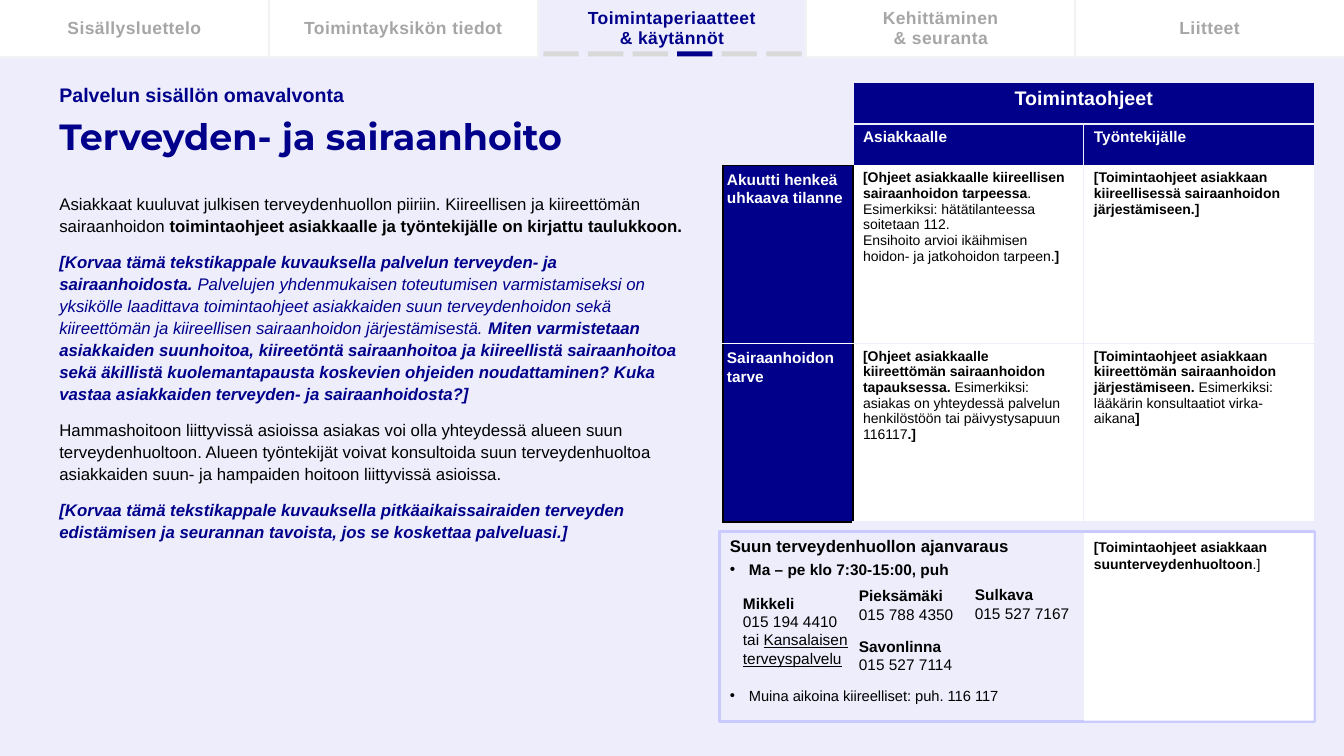
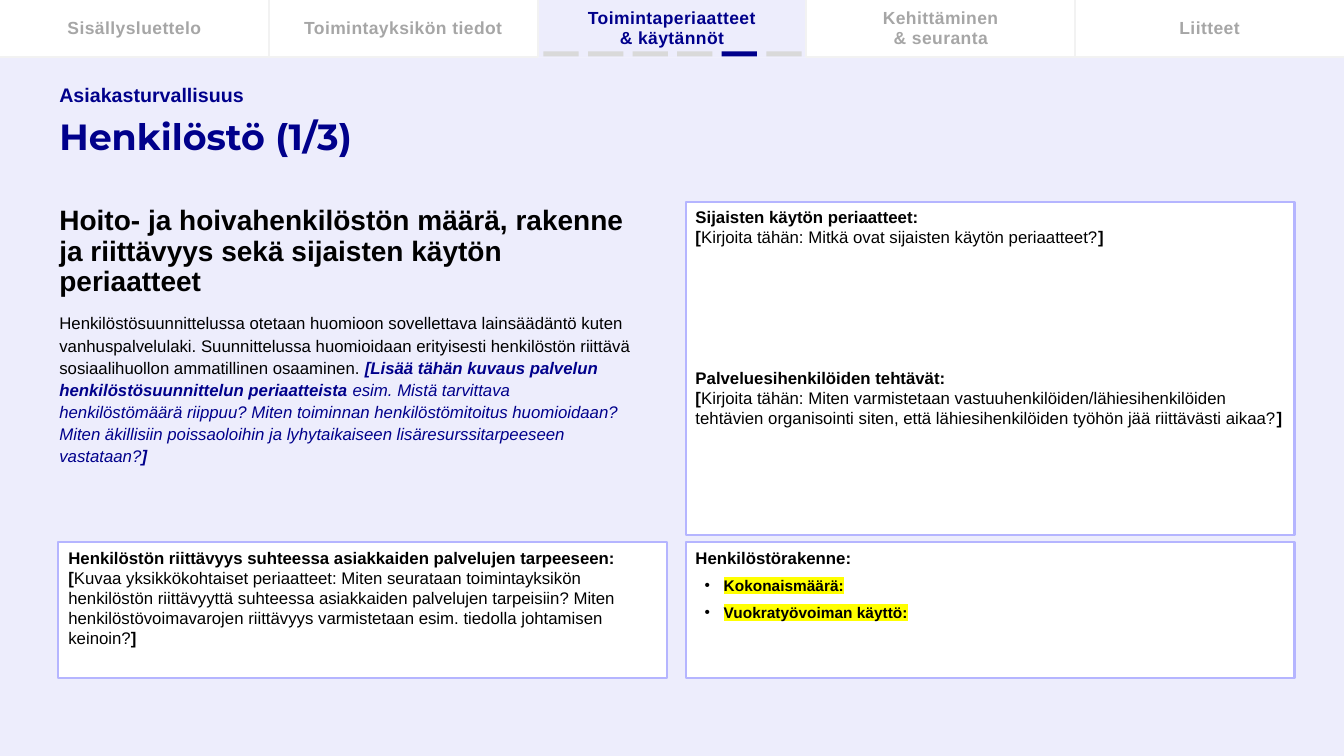
from pptx import Presentation
from pptx.dml.color import RGBColor
from pptx.enum.shapes import MSO_CONNECTOR, MSO_SHAPE
from pptx.enum.text import MSO_ANCHOR, PP_ALIGN
from pptx.oxml.ns import qn
from pptx.util import Inches, Pt
from lxml.etree import Element, SubElement

COLORS = {
    "navy": "00008B", "pale": "EDEDFC", "white": "FFFFFF", "black": "000000",
    "tab": "A6A6A6", "rule": "F2F2F2", "step": "D9D9D9",
    "frame": "B5B5FF", "contact": "C9CAFF", "yellow": "FFFF00",
}
RGB = {name: RGBColor.from_string(value) for name, value in COLORS.items()}
MARKS = {"b": "bold", "i": "italic", "u": "underline"}
BODY = {"line_spacing": 1.1, "space_before": Pt(7.9), "space_after": Pt(1.8)}
TAB_W = 13.33 / 5
TABS = ["Sisällysluettelo", "Toimintayksikön tiedot", "Toimintaperiaatteet\n& käytännöt",
        "Kehittäminen\n& seuranta", "Liitteet"]


def write(tf, paras, size=12, color="black", font="Arial", spc=0, **shared):
    for i, (runs, own) in enumerate(paras):
        p = tf.paragraphs[0] if i == 0 else tf.add_paragraph()
        fmt = {"size": size, "bullet": 0, **shared, **own}
        p_size, bullet = fmt.pop("size"), fmt.pop("bullet")
        if i == 0:
            fmt.pop("space_before", None)
        for name, value in fmt.items():
            setattr(p, name, value)
        if bullet:
            pPr = p._p.get_or_add_pPr()
            pPr.set("marL", str(Inches(bullet)))
            pPr.set("indent", str(Inches(-0.19)))
            SubElement(pPr, qn("a:buFont"), typeface="Arial")
            SubElement(pPr, qn("a:buChar"), char="•")
        for text, marks in runs:
            for j, line in enumerate(text.split("\n")):
                if j:
                    p.add_line_break()
                r = p.add_run()
                r.text = line
                look = {"name": font, "size": Pt(p_size), "bold": False}
                look.update({MARKS[m]: True for m in marks if m in MARKS})
                for name, value in look.items():
                    setattr(r.font, name, value)
                r.font.color.rgb = RGB["navy" if "n" in marks else color]
                rPr = r._r.get_or_add_rPr()
                if spc:
                    rPr.set("spc", str(spc))
                if "h" in marks:
                    mark = Element(qn("a:highlight"))
                    SubElement(mark, qn("a:srgbClr"), val=COLORS["yellow"])
                    rPr.find(qn("a:latin")).addprevious(mark)


def box(s, rect, paras=(), fill=None, line=None, weight=1.5, anchor=MSO_ANCHOR.TOP, inset=0.05, **look):
    rect = [Inches(v) for v in rect]
    if fill or line:
        sp = s.shapes.add_shape(MSO_SHAPE.RECTANGLE, *rect)
        sp.shadow.inherit = False
        if fill:
            sp.fill.solid()
            sp.fill.fore_color.rgb = RGB[fill]
        else:
            sp.fill.background()
        if line:
            sp.line.color.rgb = RGB[line]
            sp.line.width = Pt(weight)
        else:
            sp.line.fill.background()
    else:
        sp = s.shapes.add_textbox(*rect)
    tf = sp.text_frame
    frame = {"word_wrap": True, "vertical_anchor": anchor,
             "margin_top": Inches(inset), "margin_bottom": Inches(inset)}
    for name, value in frame.items():
        setattr(tf, name, value)
    write(tf, paras, **{"alignment": PP_ALIGN.LEFT, **look})


prs = Presentation()
prs.slide_width, prs.slide_height = Inches(13.33), Inches(7.5)
slides = []
for kicker, title, active_step in [
    ("Palvelun sisällön omavalvonta", "Terveyden- ja sairaanhoito", 3),
    ("Asiakasturvallisuus", "Henkilöstö (1/3)", 4),
]:
    s = prs.slides.add_slide(prs.slide_layouts[6])
    slides.append(s)
    s.background.fill.solid()
    s.background.fill.fore_color.rgb = RGB["pale"]
    box(s, (0, 0, 13.33, 0.57), fill="white")
    box(s, (2 * TAB_W, 0, TAB_W, 0.57), fill="pale")
    for i, label in enumerate(TABS):
        box(s, (i * TAB_W, 0, TAB_W, 0.56), [([(label, "b")], {})], anchor=MSO_ANCHOR.MIDDLE,
            size=12.5, color="navy" if i == 2 else "tab", spc=30,
            alignment=PP_ALIGN.CENTER, line_spacing=Pt(14))
    rules = [(i * TAB_W, 0, i * TAB_W, 0.57) for i in range(1, 5)]
    rules += [(0, 0.57, 2 * TAB_W, 0.57), (3 * TAB_W, 0.57, 13.33, 0.57)]
    for ends in rules:
        rule = s.shapes.add_connector(MSO_CONNECTOR.STRAIGHT, *[Inches(v) for v in ends])
        rule.line.color.rgb = RGB["rule"]
        rule.line.width = Pt(1.5)
        SubElement(rule._element.spPr, qn("a:effectLst"))
    for i in range(6):
        box(s, (5.39 + i * 0.442, 0.51, 0.35, 0.05), fill="navy" if i == active_step else "step")
    box(s, (0.49, 0.82, 5, 0.24), [([(kicker, "b")], {})], anchor=MSO_ANCHOR.MIDDLE,
        inset=0, size=14, color="navy")
    box(s, (0.49, 0.9, 12.35, 0.95), [([(title, "b")], {})], anchor=MSO_ANCHOR.MIDDLE,
        size=26, color="navy", font="Montserrat", line_spacing=0.9)

care, staff = slides

box(care, (0.49, 1.85, 6.48, 4.97), [
    ([("Asiakkaat kuuluvat julkisen terveydenhuollon piiriin. Kiireellisen ja kiireettömän sairaanhoidon ", ""),
      ("toimintaohjeet asiakkaalle ja työntekijälle on kirjattu taulukkoon.", "b")], {}),
    ([("[Korvaa tämä tekstikappale kuvauksella palvelun terveyden- ja sairaanhoidosta. ", "bin"),
      ("Palvelujen yhdenmukaisen toteutumisen varmistamiseksi on yksikölle laadittava toimintaohjeet "
       "asiakkaiden suun terveydenhoidon sekä kiireettömän ja kiireellisen sairaanhoidon järjestämisestä.", "in"),
      (" Miten varmistetaan asiakkaiden suunhoitoa, kiireetöntä sairaanhoitoa ja kiireellistä sairaanhoitoa "
       "sekä äkillistä kuolemantapausta koskevien ohjeiden noudattaminen? Kuka vastaa asiakkaiden "
       "terveyden- ja sairaanhoidosta?]", "bin")], {}),
    ([("Hammashoitoon liittyvissä asioissa asiakas voi olla yhteydessä alueen suun terveydenhuoltoon. "
       "Alueen työntekijät voivat konsultoida suun terveydenhuoltoa asiakkaiden suun- ja hampaiden "
       "hoitoon liittyvissä asioissa.", "")], {}),
    ([("[Korvaa tämä tekstikappale kuvauksella pitkäaikaissairaiden terveyden edistämisen ja seurannan "
       "tavoista, jos se koskettaa palveluasi.]", "bin")], {}),
], **BODY)

box(care, (7.14, 5.27, 5.9, 1.89), [
    ([("Suun terveydenhuollon ajanvaraus", "b")], {}),
    ([("Ma – pe klo 7:30-15:00, puh", "b")], {"size": 11, "bullet": 0.19}),
    ([("Muina aikoina kiireelliset: puh. 116 117", "")],
     {"size": 10.5, "bullet": 0.19, "space_before": Pt(75)}),
], line="contact", weight=2, space_after=Pt(2.5))
box(care, (10.75, 5.29, 2.28, 1.86), [
    ([("[Toimintaohjeet asiakkaan suunterveydenhuoltoon", "b"), (".]", "")], {}),
], fill="white", size=10)

contacts = [
    (7.27, 5.84, 1.28, "Mikkeli", "015 194 4410"),
    (8.42, 5.77, 1.28, "Pieksämäki", "015 788 4350"),
    (9.57, 5.76, 1.28, "Sulkava", "015 527 7167"),
    (8.42, 6.27, 1.28, "Savonlinna", "015 527 7114"),
]
for x, y, w, town, phone in contacts:
    paras = [([(town, "b")], {}), ([(phone, "")], {})]
    if town == "Mikkeli":
        paras += [([("tai ", ""), ("Kansalaisen", "u")], {}), ([("terveyspalvelu", "u")], {})]
    box(care, (x, y, w, 0.24 + 0.18 * len(paras)), paras, size=11)

HEAD = {"size": 11, "color": "white"}
LABEL = {**HEAD, "line_spacing": 1.07, "space_after": Pt(8)}
CELL = {"size": 10}
cells = {
    (0, 1): ([([("Toimintaohjeet", "b")], {})], {**HEAD, "size": 14, "alignment": PP_ALIGN.CENTER}),
    (1, 1): ([([("Asiakkaalle", "b")], {})], HEAD),
    (1, 2): ([([("Työntekijälle", "b")], {})], HEAD),
    (2, 0): ([([("Akuutti henkeä uhkaava tilanne", "b")], {})], LABEL),
    (2, 1): ([([("[Ohjeet asiakkaalle kiireellisen sairaanhoidon tarpeessa", "b"),
                (". Esimerkiksi: hätätilanteessa soitetaan 112.", "")], {}),
              ([("Ensihoito arvioi ikäihmisen hoidon- ja jatkohoidon tarpeen.", ""), ("]", "b")], {})], CELL),
    (2, 2): ([([("[Toimintaohjeet asiakkaan kiireellisessä sairaanhoidon järjestämiseen.]", "b")], {})], CELL),
    (3, 0): ([([("Sairaanhoidon tarve", "b")], {})], LABEL),
    (3, 1): ([([("[Ohjeet asiakkaalle kiireettömän sairaanhoidon tapauksessa. ", "b"),
                ("Esimerkiksi: asiakas on yhteydessä palvelun henkilöstöön tai päivystysapuun 116117", ""),
                (".]", "b")], {})], CELL),
    (3, 2): ([([("[Toimintaohjeet asiakkaan kiireettömän sairaanhoidon järjestämiseen.", "b"),
                (" Esimerkiksi: lääkärin konsultaatiot virka-aikana", ""), ("]", "b")], {})], CELL),
}
edges = {
    (1, 0): {"B": "black"}, (1, 1): {"B": "white"}, (1, 2): {"B": "white"},
    (2, 0): {"L": "black", "R": "black", "T": "black", "B": "white"},
    (2, 1): {"L": "black", "T": "white"}, (2, 2): {"T": "white"},
    (3, 0): {"L": "black", "R": "black", "T": "white", "B": "black"}, (3, 1): {"L": "black"},
}
rows, cols = [0.41, 0.41, 1.77, 1.77], [1.29, 2.29, 2.29]
table = care.shapes.add_table(4, 3, Inches(7.17), Inches(0.82), Inches(sum(cols)), Inches(sum(rows))).table
table.first_row = table.horz_banding = False
for col, width in zip(table.columns, cols):
    col.width = Inches(width)
for r, height in enumerate(rows):
    table.rows[r].height = Inches(height)
    for c in range(3):
        cell = table.cell(r, c)
        if r < 2 and c == 0:
            cell.fill.background()
        else:
            cell.fill.solid()
            cell.fill.fore_color.rgb = RGB["navy" if r < 2 or c == 0 else "white"]
        if r > 1 and c == 0:
            cell.margin_left = cell.margin_right = Inches(0.04)
        if (r, c) in cells:
            paras, look = cells[r, c]
            write(cell.text_frame, paras, **look)
        tcPr = cell._tc.get_or_add_tcPr()
        for i, side in enumerate("LRTB"):
            ln = Element(qn(f"a:ln{side}"), w=str(Pt(1)))
            color = edges.get((r, c), {}).get(side, "pale")
            SubElement(SubElement(ln, qn("a:solidFill")), qn("a:srgbClr"), val=COLORS[color])
            tcPr.insert(i, ln)
table.cell(0, 1).merge(table.cell(0, 2))

box(staff, (0.49, 2, 5.88, 4.75), [
    ([("Hoito- ja hoivahenkilöstön määrä, rakenne ja riittävyys sekä sijaisten käytön periaatteet", "b")],
     {"size": 20, "line_spacing": 0.9, "space_after": Pt(2)}),
    ([("Henkilöstösuunnittelussa otetaan huomioon sovellettava lainsäädäntö kuten vanhuspalvelulaki. "
       "Suunnittelussa huomioidaan erityisesti henkilöstön riittävä sosiaalihuollon ammatillinen osaaminen. ", ""),
      ("[Lisää tähän kuvaus palvelun henkilöstösuunnittelun periaatteista ", "bin"),
      ("esim. Mistä tarvittava henkilöstömäärä riippuu? Miten toiminnan henkilöstömitoitus huomioidaan? "
       "Miten äkillisiin poissaoloihin ja lyhytaikaiseen lisäresurssitarpeeseen vastataan?", "in"),
      ("]", "bin")], {}),
], **BODY)

panels = [
    ((6.8, 2, 6.04, 3.31), [
        ([("Sijaisten käytön periaatteet:", "b")], {}),
        ([("[", "b"), ("Kirjoita tähän: Mitkä ovat sijaisten käytön periaatteet?", ""), ("]", "b")], {}),
        ([("Palveluesihenkilöiden tehtävät:", "b")], {"space_before": Pt(86)}),
        ([("[", "b"),
          ("Kirjoita tähän: Miten varmistetaan vastuuhenkilöiden/lähiesihenkilöiden tehtävien organisointi "
           "siten, että lähiesihenkilöiden työhön jää riittävästi aikaa?", ""), ("]", "b")], {}),
    ]),
    ((6.8, 5.38, 6.04, 1.35), [
        ([("Henkilöstörakenne:", "b")], {}),
        *[([(item, "bh")], {"size": 11, "bullet": 0.28, "space_before": Pt(6)})
          for item in ("Kokonaismäärä:", "Vuokratyövoiman käyttö:")],
    ]),
    ((0.58, 5.38, 6.04, 1.35), [
        ([("Henkilöstön riittävyys suhteessa asiakkaiden palvelujen tarpeeseen:", "b")], {}),
        ([("[", "b"),
          ("Kuvaa yksikkökohtaiset periaatteet: Miten seurataan toimintayksikön henkilöstön riittävyyttä "
           "suhteessa asiakkaiden palvelujen tarpeisiin? Miten henkilöstövoimavarojen riittävyys "
           "varmistetaan esim. tiedolla johtamisen keinoin?", ""), ("]", "b")], {}),
    ]),
]
for rect, paras in panels:
    box(staff, rect, paras, fill="white", line="frame")

prs.save("out.pptx")
